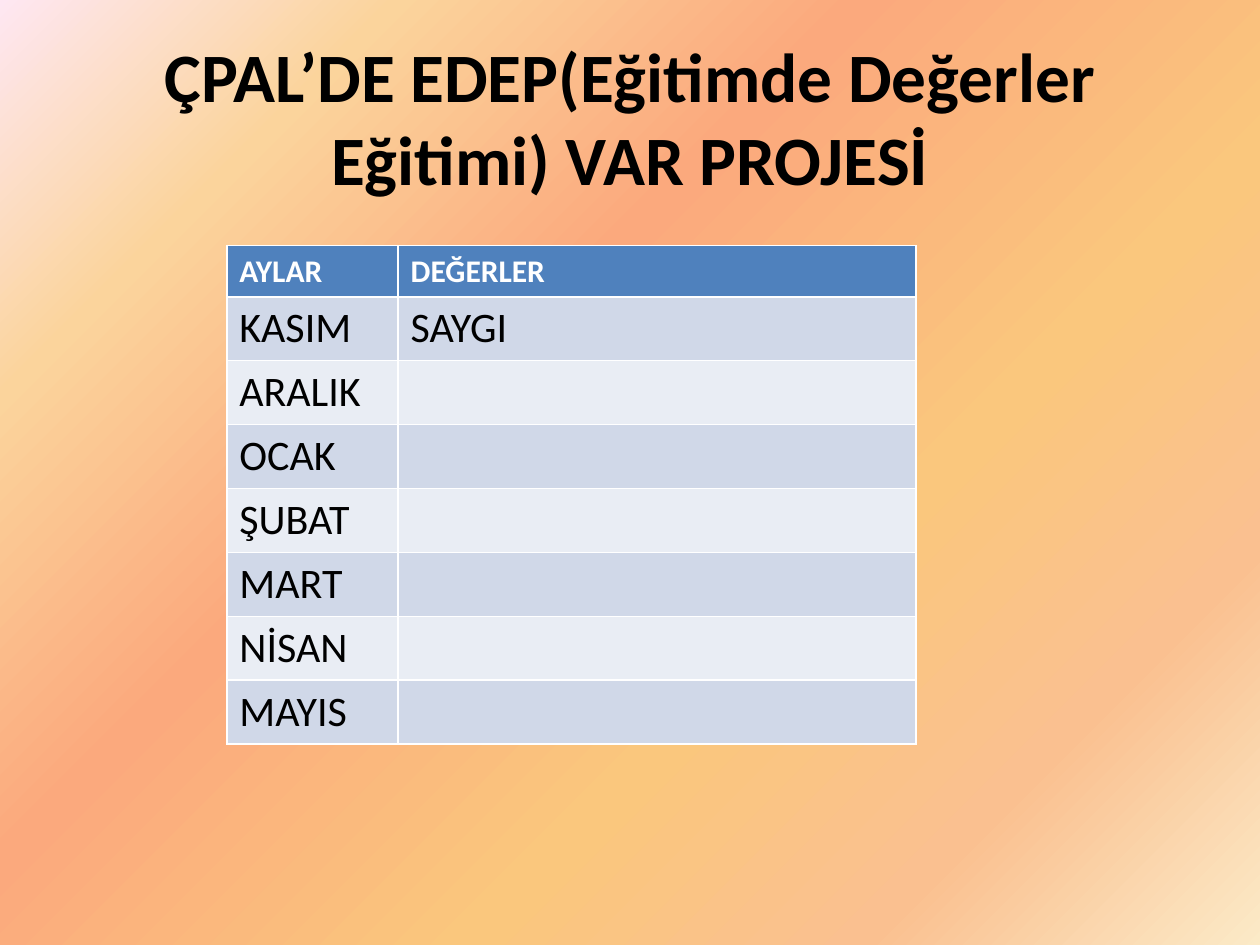
"""Build the slide listing the months and values of the EDEP school project."""
from pptx import Presentation
from pptx.dml.color import RGBColor
from pptx.enum.text import MSO_ANCHOR, MSO_AUTO_SIZE, PP_ALIGN
from pptx.oxml import parse_xml
from pptx.oxml.ns import nsdecls, qn
from pptx.util import Inches, Pt

CENTER = PP_ALIGN.CENTER
MIDDLE = MSO_ANCHOR.MIDDLE
NO_AUTOFIT = MSO_AUTO_SIZE.NONE

BLACK = RGBColor(0x00, 0x00, 0x00)
WHITE = RGBColor(0xFF, 0xFF, 0xFF)
HEADER_BLUE = RGBColor(0x4F, 0x81, 0xBD)
BAND_DARK = RGBColor(0xD0, 0xD8, 0xE8)
BAND_LIGHT = RGBColor(0xE9, 0xED, 0xF4)
BACKGROUND_STOPS = [
    (0, RGBColor(0xFB, 0xEA, 0xC7)),
    (18, RGBColor(0xFA, 0xC0, 0x90)),
    (36, RGBColor(0xFA, 0xC7, 0x7D)),
    (61, RGBColor(0xFB, 0xA9, 0x7D)),
    (82, RGBColor(0xFB, 0xD4, 0x9C)),
    (100, RGBColor(0xFE, 0xE7, 0xF2)),
]

TITLE_FORMAT = {"name": "Calibri", "size": Pt(39.6), "bold": True}
HEADER_FORMAT = {"name": "Calibri", "size": Pt(18), "bold": True}
BODY_FORMAT = {"name": "Calibri", "size": Pt(24), "bold": False}

ROWS = [
    ("AYLAR", "DEĞERLER"),
    ("KASIM", "SAYGI"),
    ("ARALIK", ""),
    ("OCAK", ""),
    ("ŞUBAT", ""),
    ("MART", ""),
    ("NİSAN", ""),
    ("MAYIS", ""),
]
COLUMN_WIDTHS = [1.36, 4.11]
HEADER_HEIGHT = 0.4
BODY_HEIGHT = 0.5


def format_font(font, values, color):
    for name, value in values.items():
        setattr(font, name, value)
    font.color.rgb = color


presentation = Presentation()
presentation.slide_width = Inches(10)
presentation.slide_height = Inches(7.5)
slide = presentation.slides.add_slide(presentation.slide_layouts[5])

slide.background.fill.gradient()
default_gradient = slide.element.find(".//" + qn("a:gradFill"))
stops = "".join(
    f'<a:gs pos="{position * 1000}"><a:srgbClr val="{color}"/></a:gs>'
    for position, color in BACKGROUND_STOPS
)
corner_gradient = parse_xml(
    f'<a:gradFill {nsdecls("a")} rotWithShape="1"><a:gsLst>{stops}</a:gsLst>'
    '<a:path path="circle"><a:fillToRect l="100000" t="100000"/></a:path>'
    '<a:tileRect r="-100000" b="-100000"/></a:gradFill>'
)
default_gradient.getparent().replace(default_gradient, corner_gradient)

title = slide.shapes.title
title.left, title.top = Inches(0.5), Inches(0.3)
title.width, title.height = Inches(9), Inches(1.25)
title.text_frame.text = "ÇPAL’DE EDEP(Eğitimde Değerler Eğitimi) VAR PROJESİ"
title.text_frame.auto_size = NO_AUTOFIT
title.text_frame.vertical_anchor = MIDDLE
title_paragraph = title.text_frame.paragraphs[0]
title_paragraph.alignment = CENTER
format_font(title_paragraph.runs[0].font, TITLE_FORMAT, BLACK)

table_height = HEADER_HEIGHT + BODY_HEIGHT * (len(ROWS) - 1)
table = slide.shapes.add_table(
    len(ROWS), len(COLUMN_WIDTHS), Inches(1.8), Inches(1.95),
    Inches(sum(COLUMN_WIDTHS)), Inches(table_height),
).table
for column, width in zip(table.columns, COLUMN_WIDTHS):
    column.width = Inches(width)

for row_index, texts in enumerate(ROWS):
    is_header = row_index == 0
    table.rows[row_index].height = Inches(HEADER_HEIGHT if is_header else BODY_HEIGHT)
    band = BAND_DARK if row_index % 2 else BAND_LIGHT
    for column_index, text in enumerate(texts):
        cell = table.cell(row_index, column_index)
        cell.fill.solid()
        cell.fill.fore_color.rgb = HEADER_BLUE if is_header else band
        if text:
            cell.text = text
            format_font(
                cell.text_frame.paragraphs[0].runs[0].font,
                HEADER_FORMAT if is_header else BODY_FORMAT,
                WHITE if is_header else BLACK,
            )

presentation.save("out.pptx")
